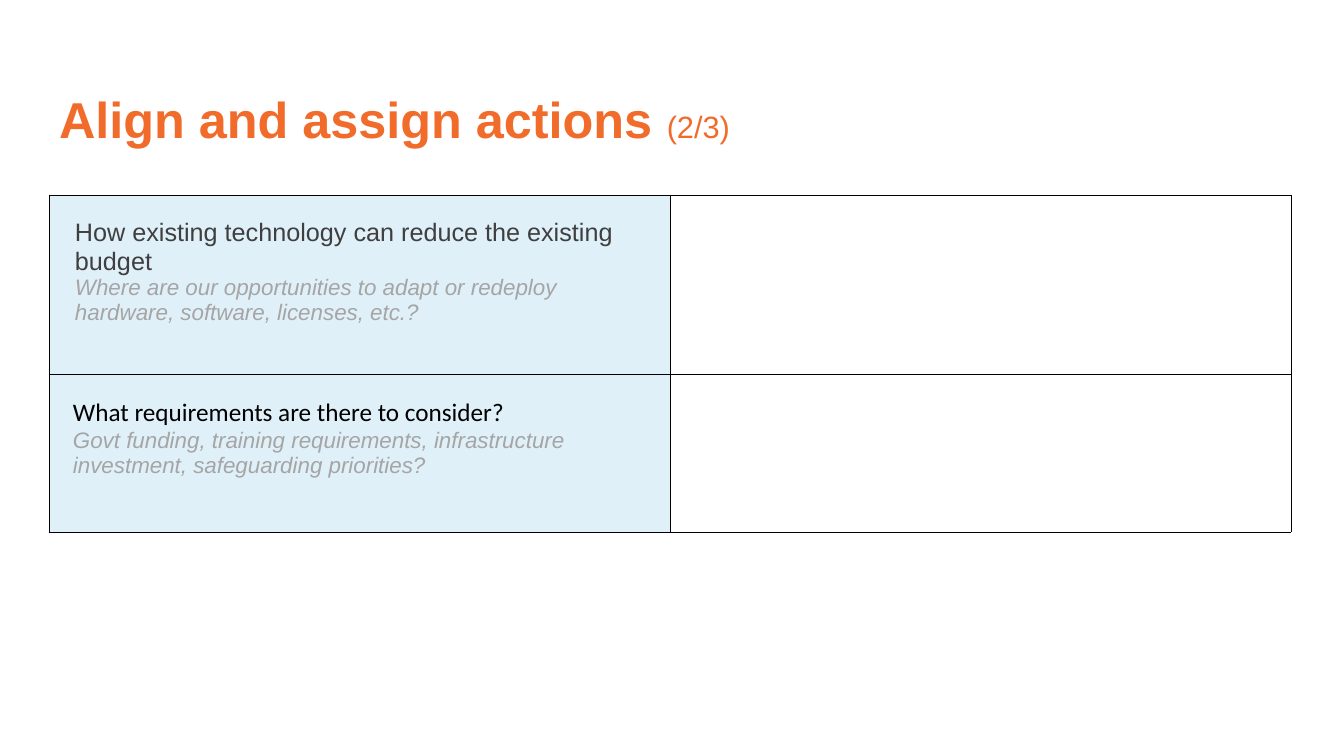
from lxml import etree
from pptx import Presentation
from pptx.dml.color import RGBColor
from pptx.enum.text import MSO_ANCHOR, PP_ALIGN
from pptx.oxml.ns import qn
from pptx.util import Pt

MIDDLE, TOP, LEFT = MSO_ANCHOR.MIDDLE, MSO_ANCHOR.TOP, PP_ALIGN.LEFT
ORANGE = RGBColor(0xF1, 0x6B, 0x2B)
DARK = RGBColor(0x3F, 0x3F, 0x3F)
GREY = RGBColor(0xA5, 0xA5, 0xA5)
BLACK = RGBColor(0, 0, 0)
WHITE = RGBColor(255, 255, 255)
PALE_BLUE = RGBColor(0xE0, 0xF0, 0xF9)

# Content: text, size, bold
TITLE = [("Align and assign actions ", 36, True), ("(2/3)", 22, False)]
# Question, its font and colour, prompt, indent px, row height px
QUESTIONS = [
    ("How existing technology can reduce the existing budget", "Arial", DARK,
     "Where are our opportunities to adapt or redeploy hardware, software, licenses, etc.?",
     2, 179),
    ("What requirements are there to consider?", "Calibri", BLACK,
     "Govt funding, training requirements, infrastructure investment, safeguarding priorities?",
     0, 158),
]

# Layout in px
SCALE = 914400 / 100.8
PAGE_W, PAGE_H = 1344, 756
MARGIN, TITLE_TOP, TITLE_W, TITLE_H = 49, 49, 1159, 147
TABLE_TOP, COLUMN_W, CELL_INSET = 195, 621, 24


def px(length):
    return round(length * SCALE)


def add_span(para, text, size, color, font="Arial", bold=False, italic=False):
    span = para.add_run()
    span.text = text
    span.font.name, span.font.size = font, Pt(size)
    span.font.bold, span.font.italic = bold, italic
    span.font.color.rgb = color


def style_cell(cell, fill):
    properties = cell._tc.get_or_add_tcPr()
    for side in ("a:lnL", "a:lnR", "a:lnT", "a:lnB"):
        line = etree.SubElement(properties, qn(side), w=str(Pt(0.75)))
        paint = etree.SubElement(line, qn("a:solidFill"))
        etree.SubElement(paint, qn("a:srgbClr"), val=str(BLACK))
    cell.fill.solid()
    cell.fill.fore_color.rgb = fill


deck = Presentation()
deck.slide_width, deck.slide_height = px(PAGE_W), px(PAGE_H)
page = deck.slides.add_slide(deck.slide_layouts[5])

# Title
title = page.shapes.title
title.left, title.top = px(MARGIN), px(TITLE_TOP)
title.width, title.height = px(TITLE_W), px(TITLE_H)
title.text_frame.word_wrap = True
title.text_frame.vertical_anchor = MIDDLE
heading = title.text_frame.paragraphs[0]
heading.alignment, heading.line_spacing = LEFT, 0.9
for text, size, bold in TITLE:
    add_span(heading, text, size, ORANGE, bold=bold)

# Table of questions with blank answer cells
table_height = sum(question[-1] for question in QUESTIONS)
table = page.shapes.add_table(len(QUESTIONS), 2, px(MARGIN), px(TABLE_TOP),
                              px(2 * COLUMN_W), px(table_height)).table
table.first_row = table.horz_banding = False
for column in table.columns:
    column.width = px(COLUMN_W)

for row, (question, font, color, prompt, indent, height) in enumerate(QUESTIONS):
    table.rows[row].height = px(height)
    cell = table.cell(row, 0)
    style_cell(cell, PALE_BLUE)
    style_cell(table.cell(row, 1), WHITE)
    cell.margin_left = cell.margin_right = px(CELL_INSET)
    cell.margin_top = cell.margin_bottom = px(CELL_INSET)
    cell.vertical_anchor = TOP
    first, second = cell.text_frame.paragraphs[0], cell.text_frame.add_paragraph()
    for para in (first, second):
        para.alignment = LEFT
        para._p.get_or_add_pPr().set("marL", str(px(indent)))
    add_span(first, question, 18, color, font)
    add_span(second, prompt, 16, GREY, italic=True)

deck.save("out.pptx")
